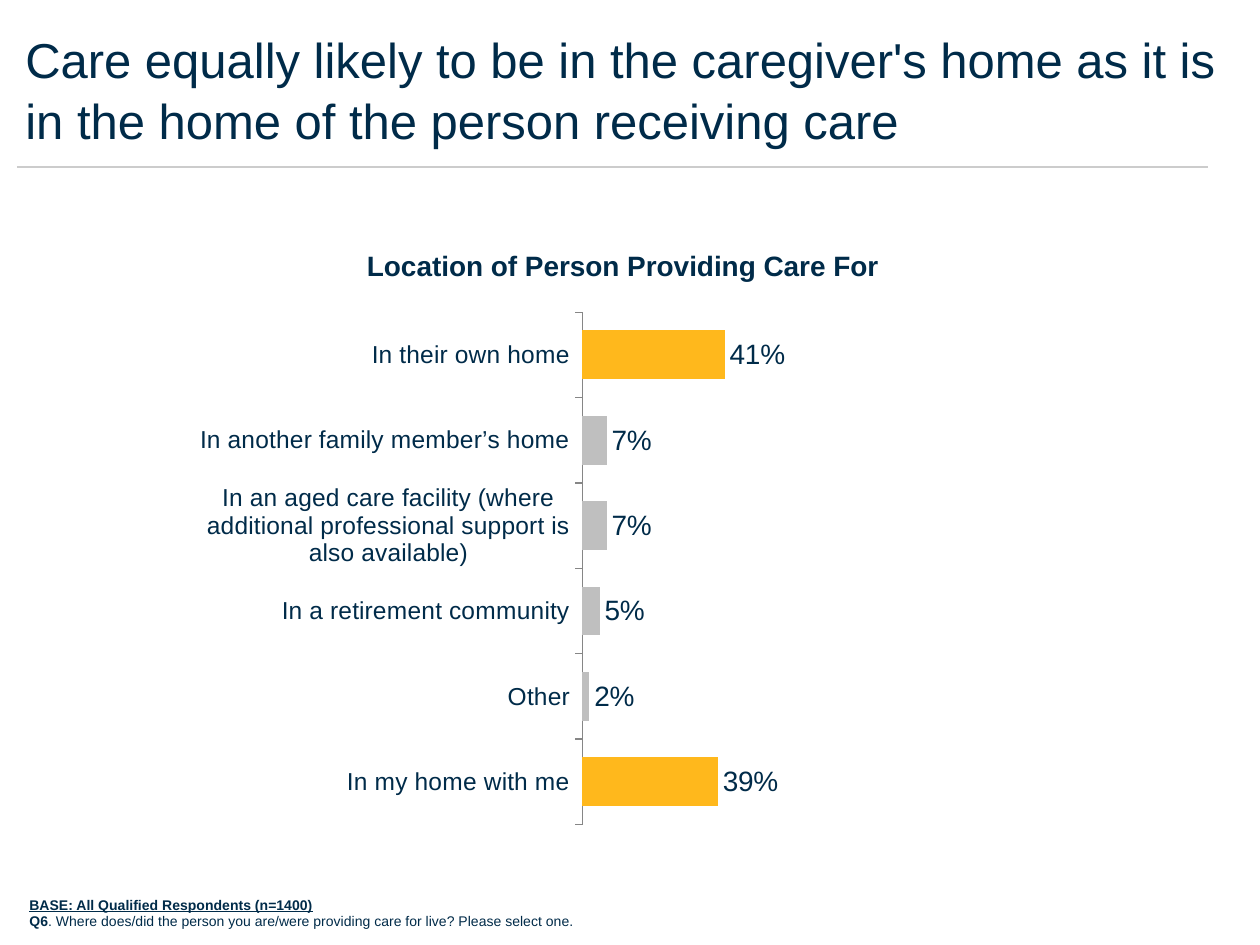
from lxml.etree import SubElement
from pptx import Presentation
from pptx.chart.data import CategoryChartData
from pptx.dml.color import RGBColor
from pptx.enum.chart import XL_CHART_TYPE, XL_LABEL_POSITION, XL_TICK_MARK
from pptx.enum.shapes import MSO_CONNECTOR
from pptx.enum.text import PP_ALIGN
from pptx.oxml import parse_xml
from pptx.oxml.ns import nsdecls, qn
from pptx.util import Emu, Pt

FONT = "Arial"
COLORS = {"navy": "002B49", "amber": "FFB81C", "gray": "BFBFBF",
          "rule": "CCCCCC", "axis": "868686"}
LOCATIONS = [
    ("In their own home", 0.41, "amber"),
    ("In another family member’s home", 0.07, "gray"),
    ("In an aged care facility (where additional professional support is "
     "also available)", 0.07, "gray"),
    ("In a retirement community", 0.05, "gray"),
    ("Other", 0.02, "gray"),
    ("In my home with me", 0.39, "amber"),
]
PLOT_AREA = {"x": 0.5, "y": 0.085, "w": 0.44, "h": 0.867}


def px(n):
    return Emu(round(n * 914400 / 126))


def color(name):
    return RGBColor.from_string(COLORS[name])


def style_font(font, size, bold=False, underline=False):
    font.name = FONT
    font.size = Pt(size)
    font.bold = bold
    font.underline = underline
    font.color.rgb = color("navy")


def add_text(s, box, paragraphs, size, align=PP_ALIGN.LEFT, spacing=1.0):
    """Each paragraph is a list of (text, bold, underline) runs."""
    tf = s.shapes.add_textbox(*map(px, box)).text_frame
    tf.word_wrap = True
    for i, runs in enumerate(paragraphs):
        p = tf.paragraphs[0] if i == 0 else tf.add_paragraph()
        p.alignment = align
        p.line_spacing = spacing
        for text, bold, underline in runs:
            r = p.add_run()
            r.text = text
            style_font(r.font, size, bold, underline)


def add_rule(s, x1, x2, y):
    line = s.shapes.add_connector(MSO_CONNECTOR.STRAIGHT, px(x1), px(y), px(x2), px(y))
    line.line.color.rgb = color("rule")
    line.line.width = Pt(0.75)
    SubElement(line._element.spPr, qn("a:effectLst"))


def set_plot_area(chart):
    """Fix the inner plot area as fractions of the chart frame."""
    modes = "".join(f'<c:{k}Mode val="edge"/>' for k in "xy")
    sizes = "".join(f'<c:{k} val="{v}"/>' for k, v in PLOT_AREA.items())
    layout = parse_xml(
        f'<c:layout {nsdecls("c")}><c:manualLayout><c:layoutTarget val="inner"/>'
        f'{modes}{sizes}</c:manualLayout></c:layout>')
    plot_area = chart._chartSpace.chart.plotArea
    for old in plot_area.findall(qn("c:layout")):
        plot_area.remove(old)
    plot_area.insert(0, layout)


def add_bar_chart(s, box):
    data = CategoryChartData(number_format="0%")
    data.categories = [name for name, _, _ in LOCATIONS]
    data.add_series("Series 1", [value for _, value, _ in LOCATIONS])
    chart = s.shapes.add_chart(XL_CHART_TYPE.BAR_CLUSTERED, *map(px, box), data).chart
    chart.has_legend = False
    chart.has_title = False
    style_font(chart.font, 18)
    set_plot_area(chart)

    axis = chart.category_axis
    axis.reverse_order = True
    axis.major_tick_mark = XL_TICK_MARK.OUTSIDE
    axis.format.line.color.rgb = color("axis")
    style_font(axis.tick_labels.font, 14)
    values = chart.value_axis
    values.minimum_scale, values.maximum_scale = 0, 1
    values.has_major_gridlines = False
    values.visible = False

    plot = chart.plots[0]
    plot.gap_width = 75
    plot.vary_by_categories = False
    series = plot.series[0]
    series.format.fill.solid()
    series.format.fill.fore_color.rgb = color("amber")
    for i, (_, _, fill) in enumerate(LOCATIONS):
        if fill != "amber":
            point_fill = series.points[i].format.fill
            point_fill.solid()
            point_fill.fore_color.rgb = color(fill)
    labels = series.data_labels
    labels.show_value = True
    labels.position = XL_LABEL_POSITION.OUTSIDE_END
    labels.number_format = "0%"
    labels.number_format_is_linked = False
    style_font(labels.font, 16)


def main():
    prs = Presentation()
    prs.slide_width, prs.slide_height = px(1260), px(945)
    s = prs.slides.add_slide(prs.slide_layouts[6])
    add_text(s, (13, 20, 1245, 131), [[(
        "Care equally likely to be in the caregiver's home as it is "
        "in the home of the person receiving care", False, False)]], 28, spacing=1.05)
    add_text(s, (17, 890, 1183, 47), [
        [("BASE: All Qualified Respondents (n=1400)", True, True)],
        [("Q6", True, False),
         (". Where does/did the person you are/were providing care for live? "
          "Please select one.", False, False)]], 8)
    add_text(s, (346, 242, 554, 47),
             [[("Location of Person Providing Care For", True, False)]],
             16, PP_ALIGN.CENTER)
    add_bar_chart(s, (188, 262, 789, 591))
    add_rule(s, 17, 1208, 167)
    prs.save("out.pptx")


if __name__ == "__main__":
    main()
